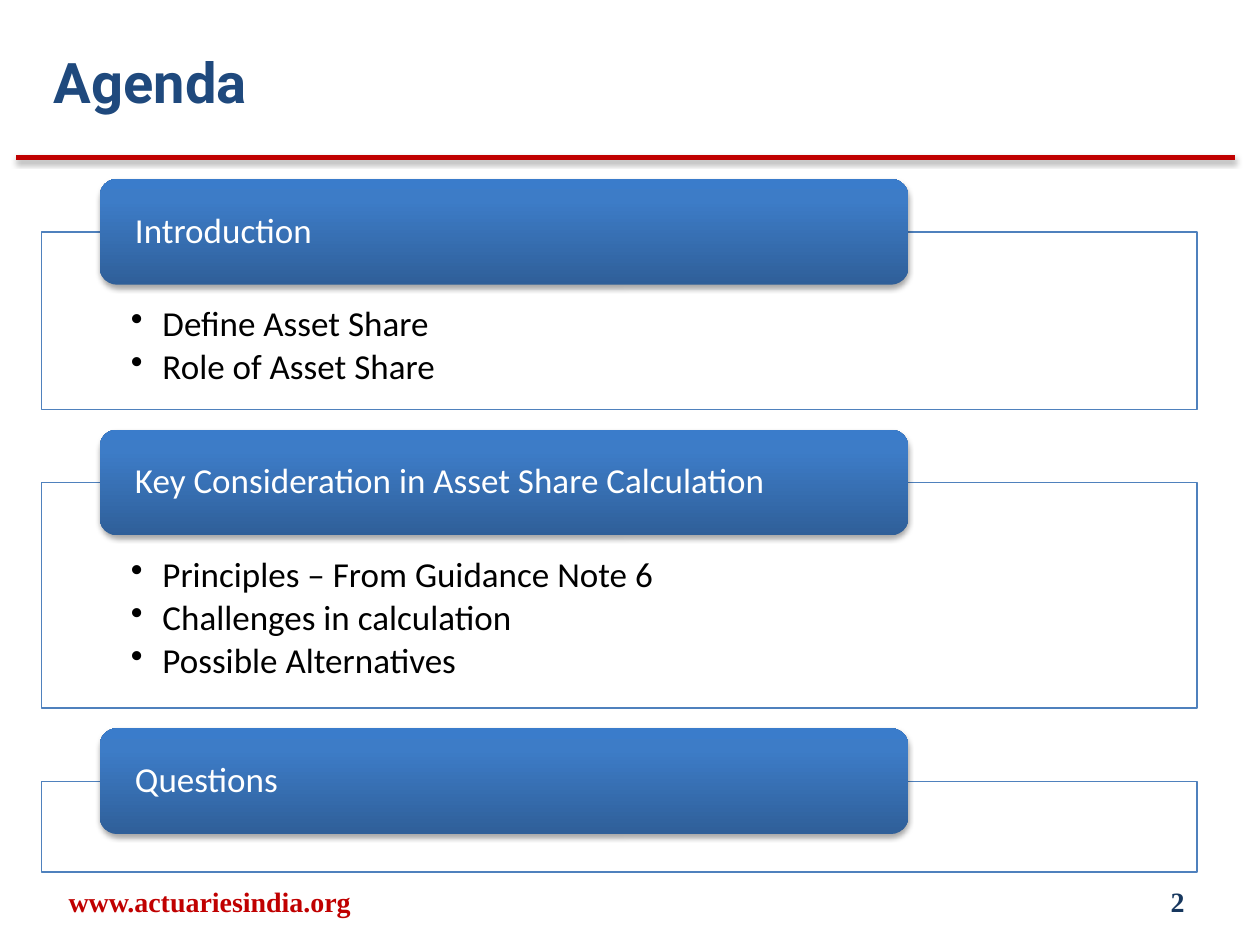
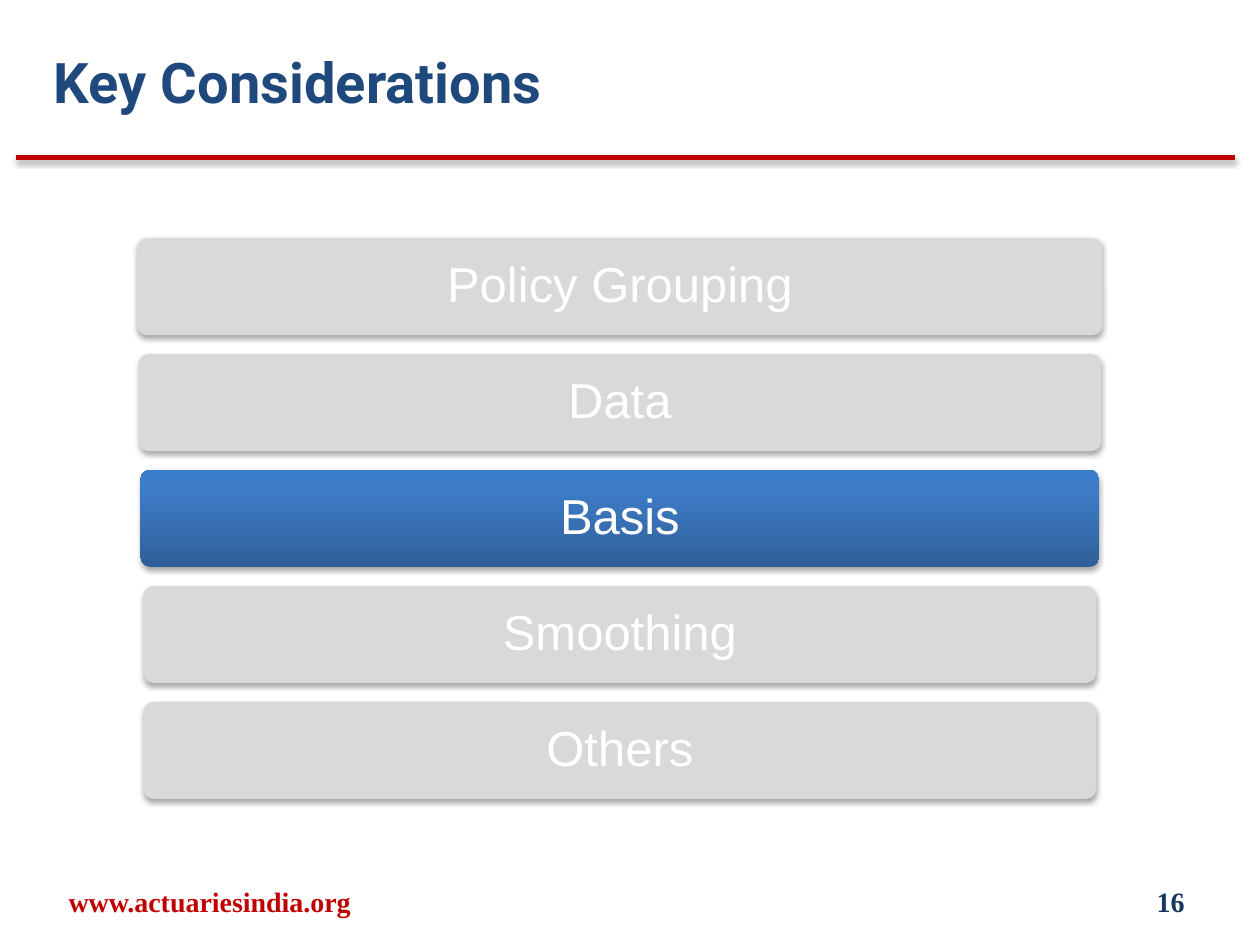
import pptx
import pptx.dml.color
import pptx.enum.shapes
import pptx.enum.text
import pptx.oxml.ns
import pptx.util
from lxml import etree

AGENDA = [  # heading, points, frame height
    ("Introduction", ["Define Asset Share", "Role of Asset Share"], 1.41),
    ("Key Consideration in Asset Share Calculation",
     ["Principles – From Guidance Note 6", "Challenges in calculation",
      "Possible Alternatives"], 1.79),
    ("Questions", [], 0.72),
]
CONSIDERATIONS = [  # label, bar width
    ("Policy Grouping", 7.66), ("Data", 7.64), ("Basis", 7.61),
    ("Smoothing", 7.56), ("Others", 7.56),
]
CURRENT = "Basis"
WEBSITE = "www.actuariesindia.org"

WIDTH, HEIGHT = 10, 7.5
RED, NAVY, TITLE_BLUE, FRAME_BLUE = "C00000", "17375E", "1F497D", "4F81BD"
WHITE, BLACK, GREY = "FFFFFF", "000000", "D9D9D9"
BLUE_GRADIENT = [(0, "2F5F99"), (80, "3D7CC7"), (100, "3A7CCB")]

FRAME_LEFT, FRAME_WIDTH = 0.33, 9.17
TAB_LEFT, TAB_TOP, TAB_WIDTH, TAB_HEIGHT = 0.79, 1.42, 6.42, 0.84
SECTION_GAP = 0.16
BAR_CENTRE, BAR_TOP, BAR_HEIGHT, BAR_PITCH = 4.92, 1.89, 0.77, 0.92

Inches, Pt = pptx.util.Inches, pptx.util.Pt
SHAPE = pptx.enum.shapes.MSO_SHAPE
ALIGN = pptx.enum.text.PP_ALIGN
ANCHOR = pptx.enum.text.MSO_ANCHOR
qn = pptx.oxml.ns.qn


def colour(value):
    return pptx.dml.color.RGBColor.from_string(value)


def child(parent, tag, **attributes):
    """Append a DrawingML element with the given attributes."""
    texts = {name: str(value) for name, value in attributes.items()}
    return etree.SubElement(parent, qn(tag), texts)


def add_shadow(shape, opacity, distance):
    """Cast a soft shadow downwards; call once fill and line are set."""
    effects = child(shape._element.spPr, "a:effectLst")
    shadow = child(effects, "a:outerShdw", blurRad=Pt(3.1), dist=Pt(distance),
                   dir=90 * 60000, rotWithShape=0)
    child(child(shadow, "a:srgbClr", val=BLACK), "a:alpha", val=opacity * 1000)


def fill_gradient(shape, stops):
    """Run the stops from the bottom of the shape to its top."""
    shape.fill.gradient()
    shape.fill.gradient_angle = 90
    stop_list = shape._element.spPr.find(".//" + qn("a:gsLst"))
    for stop in list(stop_list):
        stop_list.remove(stop)
    for position, value in stops:
        child(child(stop_list, "a:gs", pos=position * 1000), "a:srgbClr", val=value)


def write(shape, lines, font, size, value, bold=False, align=ALIGN.LEFT,
          anchor=ANCHOR.MIDDLE, insets=(0.1, 0.05, 0.1, 0.05),
          bullets=False, spacing=None, after=0):
    frame = shape.text_frame
    frame.word_wrap = True
    frame.vertical_anchor = anchor
    (frame.margin_left, frame.margin_top,
     frame.margin_right, frame.margin_bottom) = map(Inches, insets)
    frame.text = "\n".join(lines)
    for paragraph in frame.paragraphs:
        if bullets:
            properties = paragraph._p.get_or_add_pPr()
            properties.set("marL", str(Inches(0.25)))
            properties.set("indent", str(-Inches(0.25)))
            child(properties, "a:buChar", char="•")
        paragraph.alignment = align
        paragraph.line_spacing = spacing
        paragraph.space_after = Pt(after)
        paragraph.font.name = font
        paragraph.font.size = Pt(size)
        paragraph.font.bold = bold
        paragraph.font.color.rgb = colour(value)


def add_text(slide, box, text, font, size, value, **options):
    shape = slide.shapes.add_textbox(*map(Inches, box))
    write(shape, [text], font, size, value, bold=True, **options)


def add_button(slide, box, fill):
    """Add a rounded, shadowed box filled with a colour or a list of stops."""
    button = slide.shapes.add_shape(SHAPE.ROUNDED_RECTANGLE, *map(Inches, box))
    if isinstance(fill, str):
        button.fill.solid()
        button.fill.fore_color.rgb = colour(fill)
    else:
        fill_gradient(button, fill)
    button.line.fill.background()
    add_shadow(button, 35, 1.8)
    return button


def add_slide(presentation, title, number):
    """Add a blank slide with the shared title, rule and footer."""
    slide = presentation.slides.add_slide(presentation.slide_layouts[6])
    rule = slide.shapes.add_connector(
        pptx.enum.shapes.MSO_CONNECTOR.STRAIGHT,
        *map(Inches, (0.13, 1.25, 9.8, 1.25)))
    rule.line.color.rgb = colour(RED)
    rule.line.width = Pt(3)
    add_shadow(rule, 38, 1.6)
    add_text(slide, (0.08, 6.95, 3.17, 0.4), WEBSITE, "Times New Roman", 16, RED,
             align=ALIGN.CENTER)
    add_text(slide, (7.17, 6.95, 2.33, 0.4), str(number), "Times New Roman", 16,
             NAVY, align=ALIGN.RIGHT)
    add_text(slide, (0.33, 0.33, 4.75, 0.67), title, "Roboto", 32, TITLE_BLUE,
             anchor=ANCHOR.TOP)
    return slide


def build_agenda(presentation):
    slide = add_slide(presentation, "Agenda", 2)
    top = TAB_TOP
    for heading, points, height in AGENDA:
        frame_top = top + TAB_HEIGHT / 2
        frame = slide.shapes.add_shape(
            SHAPE.RECTANGLE,
            *map(Inches, (FRAME_LEFT, frame_top, FRAME_WIDTH, height)))
        frame.shadow.inherit = False
        frame.fill.solid()
        frame.fill.fore_color.rgb = colour(WHITE)
        frame.line.color.rgb = colour(FRAME_BLUE)
        frame.line.width = Pt(0.75)
        if points:
            write(frame, points, "Calibri", 20, BLACK, anchor=ANCHOR.TOP,
                  insets=(0.71, 0.59, 0.71, 0.16), bullets=True,
                  spacing=0.9, after=3)
        tab = add_button(slide, (TAB_LEFT, top, TAB_WIDTH, TAB_HEIGHT), BLUE_GRADIENT)
        write(tab, [heading], "Calibri", 20, WHITE, insets=(0.24, 0, 0.24, 0),
              spacing=0.9)
        top = frame_top + height + SECTION_GAP


def build_considerations(presentation):
    slide = add_slide(presentation, "Key Considerations", 16)
    for row, (label, width) in enumerate(CONSIDERATIONS):
        box = (BAR_CENTRE - width / 2, BAR_TOP + row * BAR_PITCH, width, BAR_HEIGHT)
        bar = add_button(slide, box, BLUE_GRADIENT if label == CURRENT else GREY)
        bar.adjustments[0] = 0.1
        write(bar, [label], "Arial", 28, WHITE, align=ALIGN.CENTER,
              insets=(0.12,) * 4, spacing=0.9)


def main():
    presentation = pptx.Presentation()
    presentation.slide_width = Inches(WIDTH)
    presentation.slide_height = Inches(HEIGHT)
    build_agenda(presentation)
    build_considerations(presentation)
    presentation.save("out.pptx")


if __name__ == "__main__":
    main()
